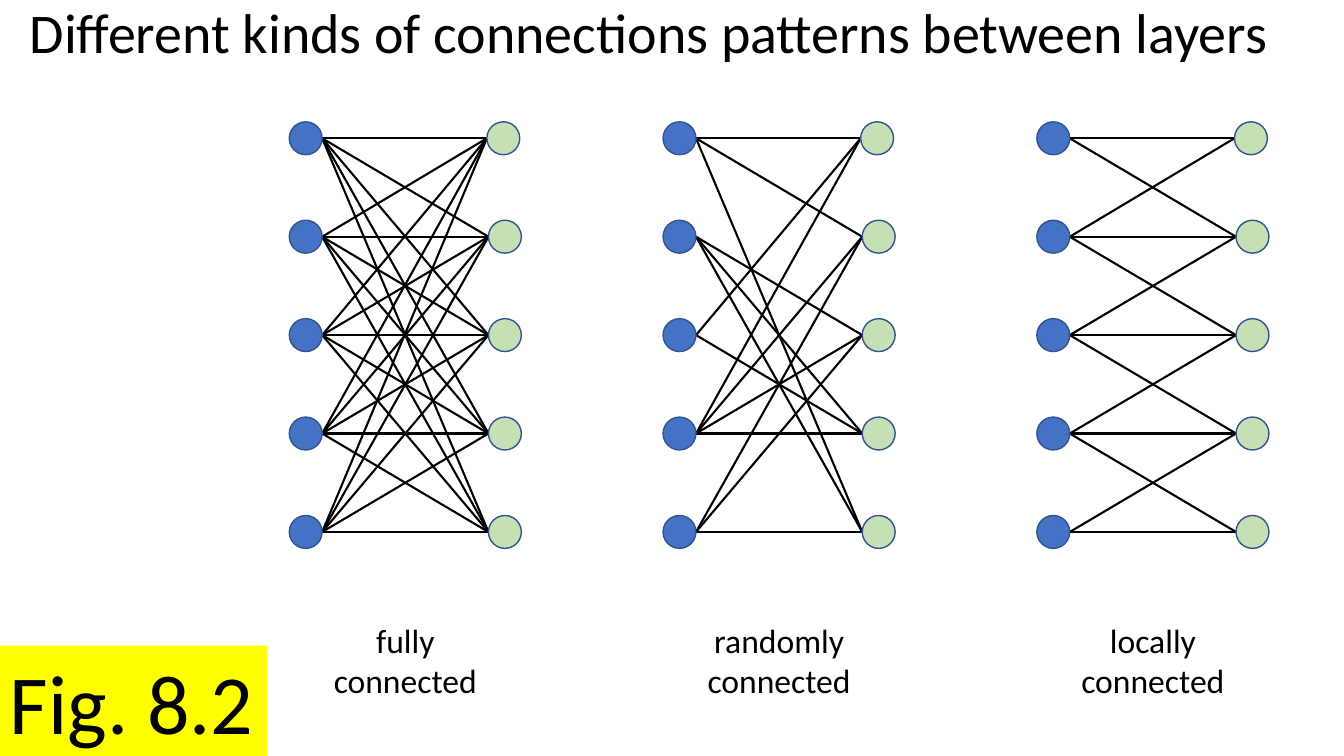
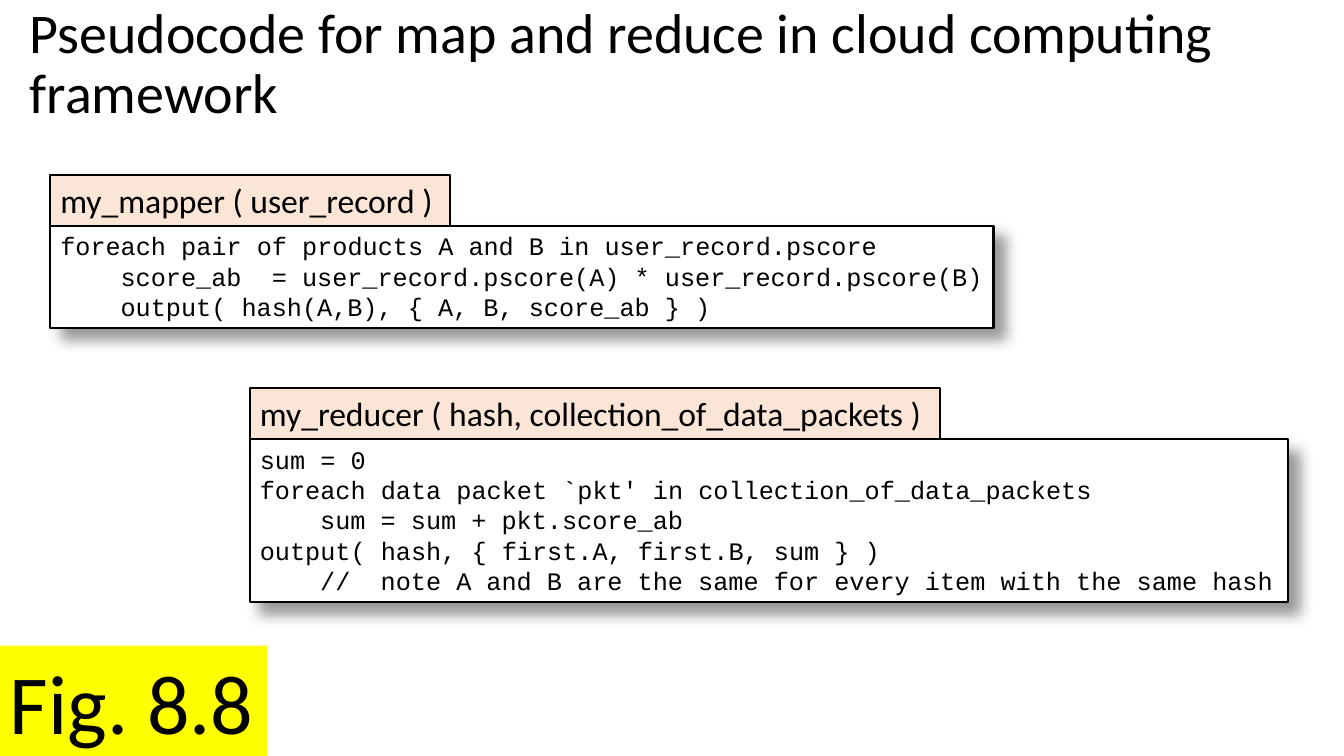
from dataclasses import dataclass
from pptx import Presentation
from pptx import util as u
from pptx.dml.color import RGBColor
from pptx.enum import shapes, text
from pptx.oxml import parse_xml
from pptx.oxml.ns import nsdecls, qn

Cm, Pt = u.Cm, u.Pt


@dataclass(frozen=True)
class Theme:
    black: str = "000000"
    white: str = "FFFFFF"
    tag: str = "FFFF00"
    node_in: str = "4472C4"
    node_out: str = "C5E0B4"
    node_edge: str = "325491"
    header: str = "FBE5D6"
    sans: str = "Calibri"
    mono: str = "Courier New"
    tag_size: int = 60
    title_size: int = 40
    label_size: int = 24
    code_size: int = 18


T = Theme()

# Content: for each input node, the output nodes it reaches
N = 5
NETWORKS = [
    ("fully\vconnected", [range(N)] * N),
    ("randomly\vconnected", [(0, 1, 4), (2, 3, 4), (0, 3), (0, 1, 2, 3), (1, 2, 4)]),
    ("locally\vconnected", [range(max(i - 1, 0), min(i + 2, N)) for i in range(N)]),
]
# Code lines are (indent level, text)
PANELS = [
    dict(head="my_mapper ( user_record )", left=1.27, top=4.4, head_w=10.08,
         body_w=23.77, body_h=2.57, code=[
             (0, "foreach pair of products A and B in user_record.pscore"),
             (1, "score_ab  = user_record.pscore(A) * user_record.pscore(B)"),
             (1, "output( hash(A,B), { A, B, score_ab } )")]),
    dict(head="my_reducer ( hash, collection_of_data_packets )", left=6.3, top=9.78,
         head_w=17.4, body_w=26.16, body_h=4.11, code=[
             (0, "sum = 0"),
             (0, "foreach data packet `pkt' in collection_of_data_packets"),
             (1, "sum = sum + pkt.score_ab"),
             (0, "output( hash, { first.A, first.B, sum } )"),
             (1, "//  note A and B are the same for every item with the same hash")]),
]

# Layout in centimetres
NODE, ROW_STEP, NET_STEP = 0.83, 2.48, 9.42
NET_LEFT, NET_TOP, OUT_DX, OUT_DX_FIRST = 7.29, 3.07, 5.02, 4.98
LABEL_TOP, LABEL_H = 15.49, 2.3
HEAD_H, CODE_INDENT, INSET = 1.29, 1.52, 0.25


def rgb(value):
    return RGBColor.from_string(value)


def write(sp, lines, size, font=T.sans, centred=False, spacing=None):
    """Fill sp with lines, each a string or an (indent level, string) pair."""
    tf = sp.text_frame
    tf.word_wrap = True
    tf.vertical_anchor = text.MSO_ANCHOR.TOP
    tf.margin_left, tf.margin_right = Cm(0 if centred else INSET), 0
    for i, line in enumerate(lines):
        level, words = (0, line) if isinstance(line, str) else line
        p = tf.paragraphs[0] if i == 0 else tf.add_paragraph()
        p.text = words
        p.alignment = text.PP_ALIGN.CENTER if centred else text.PP_ALIGN.LEFT
        if spacing:
            p.line_spacing = spacing
        if level:
            p._p.get_or_add_pPr().set("marL", str(Cm(CODE_INDENT * level)))
        for r in p.runs:
            r.font.name, r.font.size = font, Pt(size)
            r.font.color.rgb = rgb(T.black)


def box(parent, kind, x, y, w, h, fill, edge=None, edge_w=1.5):
    sp = parent.shapes.add_shape(kind, Cm(x), Cm(y), Cm(w), Cm(h))
    sp.shadow.inherit = False
    sp.fill.solid()
    sp.fill.fore_color.rgb = rgb(fill)
    if edge:
        sp.line.color.rgb, sp.line.width = rgb(edge), Pt(edge_w)
    else:
        sp.line.fill.background()
    return sp


def link(parent, x1, y1, x2, y2):
    c = parent.shapes.add_connector(shapes.MSO_CONNECTOR.STRAIGHT,
                                    Cm(x1), Cm(y1), Cm(x2), Cm(y2))
    c.line.color.rgb, c.line.width = rgb(T.black), Pt(1.5)
    c._element.spPr.append(parse_xml(f"<a:effectLst {nsdecls('a')}/>"))


def cast_shadow(sp):
    effects = sp._element.spPr.find(qn("a:effectLst"))
    effects.append(parse_xml(
        f'<a:outerShdw {nsdecls("a")} blurRad="{Pt(10)}" dist="{Pt(10)}" dir="2700000" '
        f'algn="tl" rotWithShape="0"><a:srgbClr val="{T.black}">'
        '<a:alpha val="40000"/></a:srgbClr></a:outerShdw>'))


def new_slide(prs, title, tag):
    s = prs.slides.add_slide(prs.slide_layouts[6])
    sp = box(s, shapes.MSO_SHAPE.RECTANGLE, 0, 16.27, 6.73, 2.82, T.tag)
    write(sp, [tag], T.tag_size)
    sp = s.shapes.add_textbox(Cm(0.5), Cm(0), Cm(32.44), Cm(4.34))
    write(sp, [title], T.title_size, spacing=0.9)
    return s


def draw_network(s, x, label, targets):
    g = s.shapes.add_group_shape()
    tops = [NET_TOP + i * ROW_STEP for i in range(N)]
    outs = [x + (OUT_DX if i else OUT_DX_FIRST) for i in range(N)]
    for i, reached in enumerate(targets):
        for j in reached:
            link(g, x + NODE, tops[i] + NODE / 2, outs[j], tops[j] + NODE / 2)
    for top, out in zip(tops, outs):
        for left, fill in ((x, T.node_in), (out, T.node_out)):
            box(g, shapes.MSO_SHAPE.OVAL, left, top, NODE, NODE, fill, T.node_edge, 1)
    sp = g.shapes.add_textbox(Cm(x + NODE), Cm(LABEL_TOP), Cm(OUT_DX - NODE), Cm(LABEL_H))
    write(sp, [label], T.label_size, centred=True)


def draw_panel(s, head, left, top, head_w, body_w, body_h, code):
    g = s.shapes.add_group_shape()
    rect = shapes.MSO_SHAPE.RECTANGLE
    body = box(g, rect, left, top + HEAD_H, body_w, body_h, T.white, T.black)
    cast_shadow(body)
    write(body, code, T.code_size, font=T.mono)
    write(box(g, rect, left, top, head_w, HEAD_H, T.header, T.black), [head], T.label_size)


def main():
    prs = Presentation()
    prs.slide_width, prs.slide_height = Cm(33.87), Cm(19.05)

    # Connection patterns
    s = new_slide(prs, "Different kinds of connections patterns between layers", "Fig. 8.2")
    for k, (label, targets) in enumerate(NETWORKS):
        draw_network(s, NET_LEFT + k * NET_STEP, label, targets)

    # Map and reduce
    s = new_slide(prs, "Pseudocode for map and reduce in cloud computing framework", "Fig. 8.8")
    for panel in PANELS:
        draw_panel(s, **panel)

    prs.save("out.pptx")


if __name__ == "__main__":
    main()
